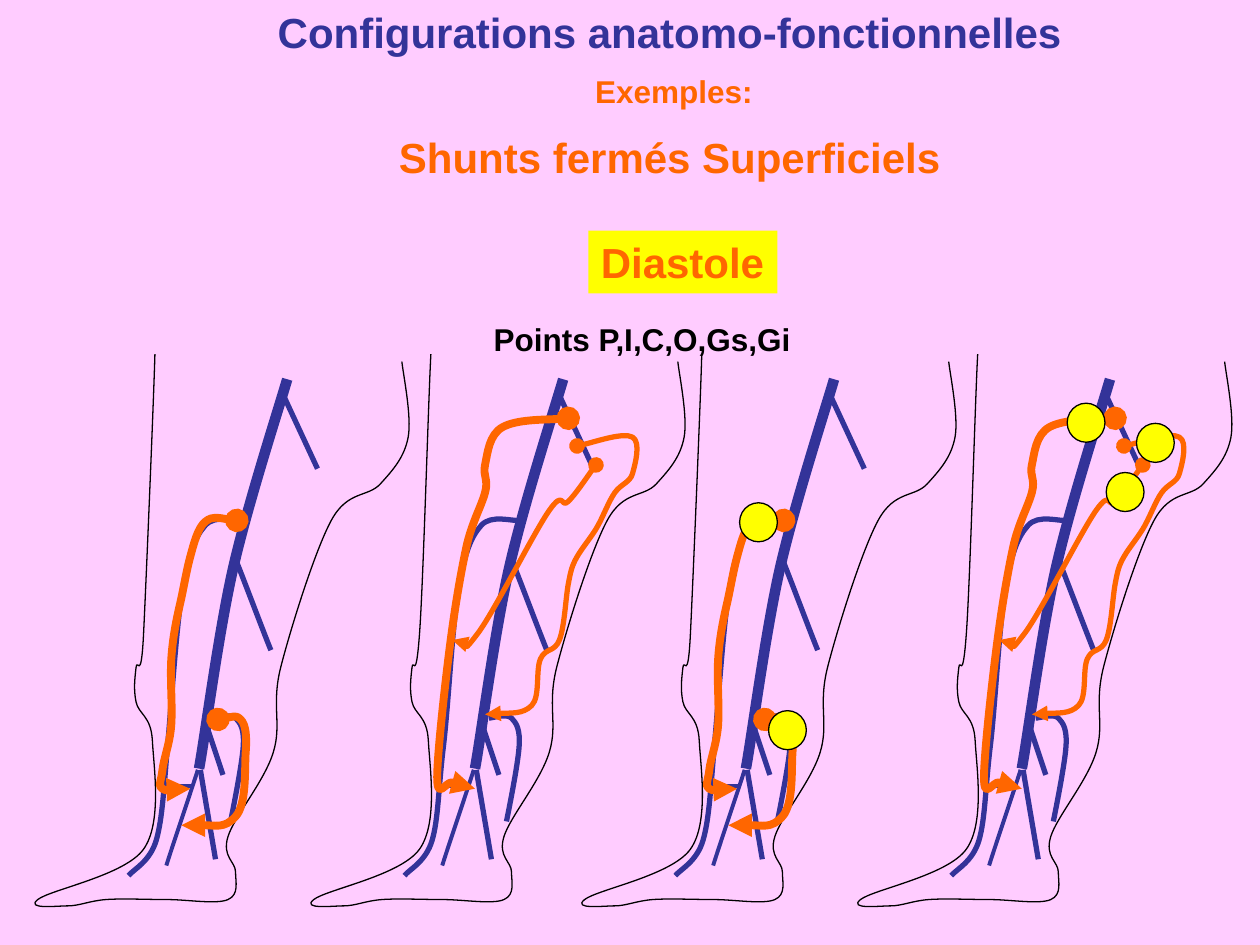
from dataclasses import dataclass
from itertools import product

from lxml.etree import SubElement
from pptx import Presentation
from pptx.dml.color import RGBColor
from pptx.enum.shapes import MSO_CONNECTOR as Connector, MSO_SHAPE as Preset
from pptx.enum.text import MSO_ANCHOR as Anchor, MSO_AUTO_SIZE as AutoSize, PP_ALIGN as Align
from pptx.oxml.ns import qn
from pptx.util import Inches, Pt

COLUMNS, ROWS = 1000, 750
UNIT = Inches(10) // COLUMNS
PAIR_STEP, LEG_STEP = 434, 219
POINT_WIDTH, POINT_HEIGHT = 30, 31
HAIRLINE, THIN, MEDIUM, THICK, TRUNK = 0.75, 2.25, 3, 4.5, 6
PINK, BLUE, ORANGE, YELLOW, BLACK = "FFCCFF", "333399", "FF6600", "FFFF00", "000000"

Position = tuple[float, float]


@dataclass(frozen=True)
class Curve:
    anchors: tuple[Position, ...]
    width: float
    color: str = BLUE
    flow: bool = False


@dataclass(frozen=True)
class Segment:
    start: Position
    end: Position
    width: float


@dataclass(frozen=True)
class Text:
    content: str
    size: int
    color: str


def shunt(width: float, *anchors: Position) -> Curve:
    return Curve(anchors, width, ORANGE, flow=True)


THIGH_FRONT = ((123, 281), (114, 503))
KNEE = ((108, 530), (108, 557))
SHIN = ((121, 588), (114, 674))
TOES = ((30, 714), (54, 719))
SOLE = ((84, 714), (133, 714), (181, 714))
HEEL = ((187, 692), (181, 664))
CALF = ((217, 597), (223, 529))
THIGH_BACK = ((263, 413), (302, 384), (324, 347), (319, 287))
SKIN = Curve(THIGH_FRONT + KNEE + SHIN + TOES + SOLE + HEEL + CALF + THIGH_BACK, HAIRLINE, BLACK)

FEMORAL_VEIN = Curve(((228, 301), (186, 447), (158, 610)), TRUNK)
LONG_VEIN = Curve(((193, 413), (163, 417), (145, 467), (133, 592), (124, 667), (102, 695)), MEDIUM)
SHORT_VEIN = Curve(((169, 570), (187, 570), (193, 593), (183, 652)), MEDIUM)
THIGH_BRANCH = Curve(((187, 444), (215, 516)), MEDIUM)
FRONT_TIBIAL_VEIN = Curve(((157, 611), (132, 687)), THIN)
BACK_TIBIAL_VEIN = Curve(((159, 611), (171, 682)), MEDIUM)
ANATOMY = (SKIN, FEMORAL_VEIN, LONG_VEIN, SHORT_VEIN, THIGH_BRANCH,
           FRONT_TIBIAL_VEIN, BACK_TIBIAL_VEIN)

KNEE_BRANCH = Segment((165, 579), (177, 615), MEDIUM)
ANKLE_BRIDGE = Segment((128, 624), (153, 624), THIN)
GROIN_BRANCH = Segment((226, 316), (252, 372), MEDIUM)
BRANCHES = (KNEE_BRANCH, ANKLE_BRIDGE, GROIN_BRANCH)

THIGH_SHUNT = shunt(THICK, (188, 413), (163, 414), (151, 442), (143, 479), (136, 523),
                    (136, 575), (129, 611), (129, 626), (151, 626))
CALF_SHUNT = shunt(THICK, (173, 571), (191, 571), (195, 597), (187, 648), (144, 655))
GROIN_SHUNT = shunt(THICK, (232, 332), (180, 339), (166, 369), (166, 391), (151, 435),
                    (139, 506), (128, 617), (140, 621), (158, 626))
CROSSING_SHUNT = shunt(MEDIUM, (254, 369), (232, 398), (217, 405), (160, 503), (140, 508))
BACK_SHUNT = shunt(MEDIUM, (239, 354), (283, 347), (283, 376), (269, 391), (254, 420),
                   (239, 442), (232, 464), (225, 508), (210, 523), (203, 560), (166, 567))
SHUNTS_BY_LEG = ((THIGH_SHUNT, CALF_SHUNT), (CROSSING_SHUNT, GROIN_SHUNT, BACK_SHUNT))
POINTS_BY_LEG = (((153, 399), (176, 564)), ((194, 320), (249, 336), (225, 375)))


def rgb(color: str) -> RGBColor:
    return RGBColor.from_string(color)


def set_line(shape, color: str, width: float) -> None:
    shape.line.color.rgb = rgb(color)
    shape.line.width = Pt(width)


def set_fill(shape, color: str) -> None:
    shape.shadow.inherit = False
    shape.fill.solid()
    shape.fill.fore_color.rgb = rgb(color)


def smooth_steps(anchors: tuple[Position, ...]) -> list[Position]:
    padded = (anchors[0], *anchors, anchors[-1])
    steps = []
    for before, start, end, after in zip(padded, padded[1:], padded[2:], padded[3:]):
        leaving = tuple(s + (e - b) / 6 for b, s, e in zip(before, start, end))
        arriving = tuple(e - (a - s) / 6 for s, e, a in zip(start, end, after))
        steps += [leaving, arriving, end]
    return steps


def draw_curve(shapes, curve: Curve, column: int) -> None:
    first_x, first_y = curve.anchors[0]
    builder = shapes.build_freeform(first_x + column, first_y, scale=UNIT)
    builder.add_line_segments([(x + column, y) for x, y in smooth_steps(curve.anchors)], close=False)
    shape = builder.convert_to_shape()
    shape.shadow.inherit = False
    shape.fill.background()
    set_line(shape, curve.color, curve.width)
    outline = next(shape._element.iter(qn("a:path")))
    steps = outline.findall(qn("a:lnTo"))
    for index in range(0, len(steps), 3):
        bezier = SubElement(outline, qn("a:cubicBezTo"))
        for step in steps[index:index + 3]:
            bezier.append(step[0])
            outline.remove(step)
    if curve.flow:
        line = shape.line._get_or_add_ln()
        SubElement(line, qn("a:headEnd"), type="oval")
        SubElement(line, qn("a:tailEnd"), type="triangle")


def draw_segment(shapes, segment: Segment, column: int) -> None:
    (x1, y1), (x2, y2) = segment.start, segment.end
    connector = shapes.add_connector(
        Connector.STRAIGHT, (x1 + column) * UNIT, y1 * UNIT, (x2 + column) * UNIT, y2 * UNIT)
    set_line(connector, BLUE, segment.width)
    SubElement(connector._element.spPr, qn("a:effectLst"))


def draw_point(shapes, column: int, row: int) -> None:
    point = shapes.add_shape(
        Preset.OVAL, column * UNIT, row * UNIT, POINT_WIDTH * UNIT, POINT_HEIGHT * UNIT)
    set_fill(point, YELLOW)
    set_line(point, BLACK, HAIRLINE)


def draw_leg(shapes, column: int, shunts: tuple[Curve, ...], points: tuple[Position, ...]) -> None:
    for curve in ANATOMY:
        draw_curve(shapes, curve, column)
    for branch in BRANCHES:
        draw_segment(shapes, branch, column)
    for curve in shunts:
        draw_curve(shapes, curve, column)
    for x, y in points:
        draw_point(shapes, x + column, y)


def write(shape, paragraphs: list[list[Text]], align: Align) -> None:
    frame = shape.text_frame
    frame.word_wrap = True
    frame.auto_size = AutoSize.NONE
    frame.vertical_anchor = Anchor.TOP
    for index, texts in enumerate(paragraphs):
        paragraph = frame.add_paragraph() if index else frame.paragraphs[0]
        paragraph.alignment = align
        paragraph.space_before = Pt(texts[-1].size / 2 if index else 0)
        for text in texts:
            run = paragraph.add_run()
            run.text = text.content
            run.font.name = "Arial"
            run.font.size = Pt(text.size)
            run.font.bold = True
            run.font.color.rgb = rgb(text.color)


def main() -> None:
    presentation = Presentation()
    presentation.slide_width, presentation.slide_height = COLUMNS * UNIT, ROWS * UNIT
    slide = presentation.slides.add_slide(presentation.slide_layouts[5])
    slide.background.fill.solid()
    slide.background.fill.fore_color.rgb = rgb(PINK)
    shapes = slide.shapes

    for pair, leg in product(range(2), range(2)):
        points = POINTS_BY_LEG[leg] if pair == 1 else ()
        draw_leg(shapes, pair * PAIR_STEP + leg * LEG_STEP, SHUNTS_BY_LEG[leg], points)

    phase = shapes.add_shape(Preset.RECTANGLE, 467 * UNIT, 183 * UNIT, 150 * UNIT, 50 * UNIT)
    set_fill(phase, YELLOW)
    phase.line.fill.background()
    write(phase, [[Text("Diastole", 24, ORANGE)]], Align.LEFT)

    title = shapes.title
    title.left, title.top, title.width, title.height = 185 * UNIT, 0, 693 * UNIT, 200 * UNIT
    write(title, [
        [Text("Configurations anatomo-fonctionnelles", 24, BLUE)],
        [Text(" ", 18, BLACK), Text("Exemples:", 18, ORANGE)],
        [Text("Shunts fermés Superficiels", 24, ORANGE)],
    ], Align.CENTER)

    legend = shapes.add_textbox(382 * UNIT, 249 * UNIT, 260 * UNIT, 40 * UNIT)
    write(legend, [[Text("Points P,I,C,O,Gs,Gi", 18, BLACK)]], Align.LEFT)

    presentation.save("out.pptx")


if __name__ == "__main__":
    main()
